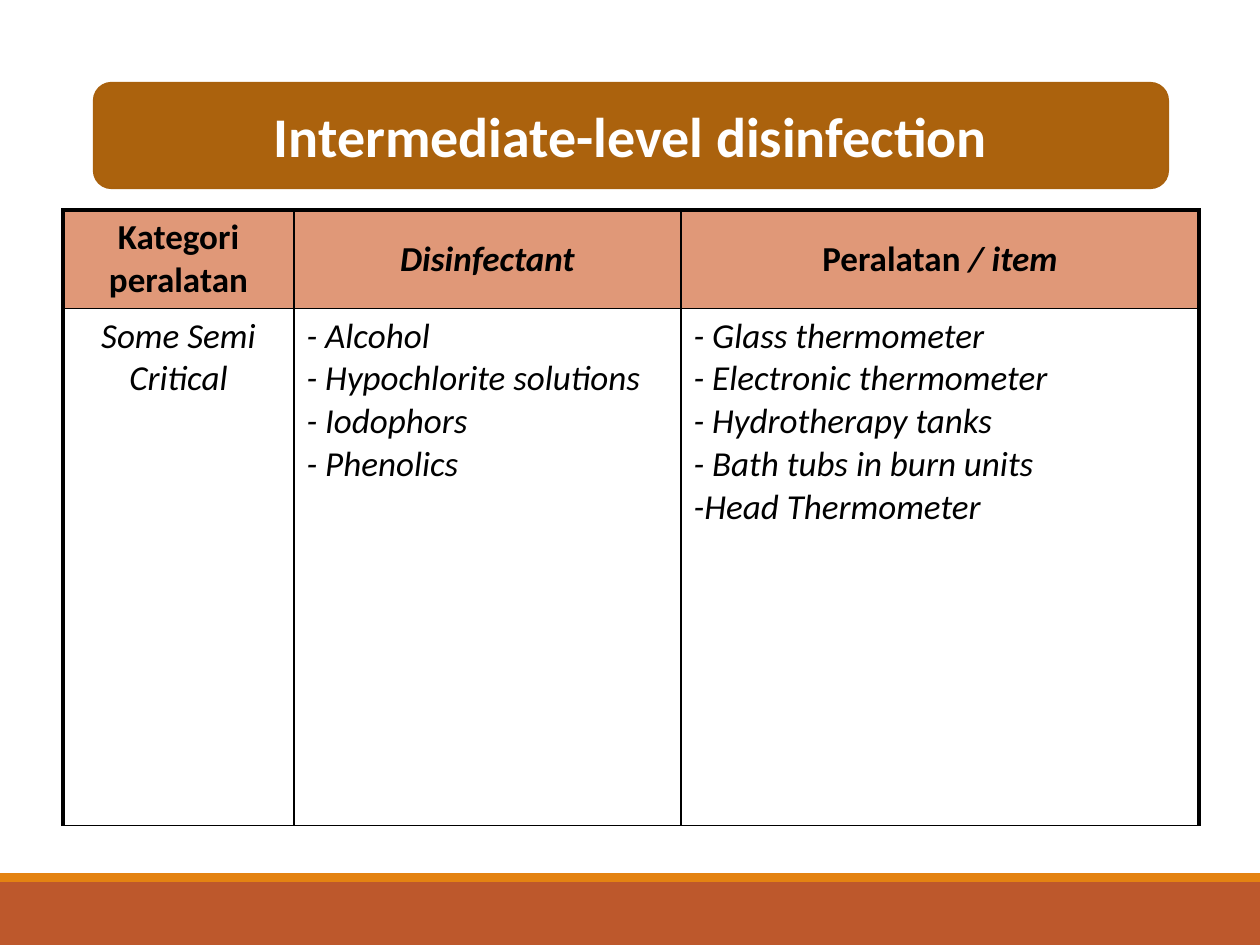
from lxml import etree
from pptx import Presentation
from pptx.dml.color import RGBColor
from pptx.enum.shapes import MSO_SHAPE
from pptx.enum.text import MSO_ANCHOR, PP_ALIGN
from pptx.oxml.ns import qn
from pptx.util import Emu, Pt

RECT = MSO_SHAPE.RECTANGLE
ROUND = MSO_SHAPE.ROUNDED_RECTANGLE
LEFT, MID = PP_ALIGN.LEFT, PP_ALIGN.CENTER
TOP, CENTER = MSO_ANCHOR.TOP, MSO_ANCHOR.MIDDLE
SCALE = 914400 / 126
THIN, THICK = 1, 2.25

HEADS = [
    [("Kategori peralatan", False)],
    [("Disinfectant", True)],
    [("Peralatan ", False), ("/ item", True)],
]
BODY = [
    "Some Semi Critical",
    "- Alcohol\n- Hypochlorite solutions\n- Iodophors\n- Phenolics",
    "- Glass thermometer\n- Electronic thermometer\n- Hydrotherapy tanks\n"
    "- Bath tubs in burn units\n-Head Thermometer",
]


def px(num):
    return Emu(round(num * SCALE))


def color(code):
    return RGBColor.from_string(code)


class Deck:
    """Holds the style and the current slide, and draws each kind of element."""

    font = "Calibri"
    ink = "000000"

    def __init__(self):
        self.prs = Presentation()
        self.prs.slide_width, self.prs.slide_height = px(1260), px(945)
        self.slide = self.prs.slides.add_slide(self.prs.slide_layouts[5])

    def style(self, run, size, code, bold=False, italic=False):
        font = run.font
        font.name, font.size = self.font, Pt(size)
        font.bold, font.italic = bold, italic
        font.color.rgb = color(code)

    def shape(self, kind, box, fill, line=None):
        shape = self.slide.shapes.add_shape(kind, *map(px, box))
        shape.shadow.inherit = False
        shape.fill.solid()
        shape.fill.fore_color.rgb = color(fill)
        if line:
            shape.line.color.rgb = color(line)
            shape.line.width = Pt(1.25)
        else:
            shape.line.fill.background()
        return shape

    def title(self, text, box):
        panel = self.shape(ROUND, box, "AB620D", "A9610D")
        title = self.slide.shapes.title
        title.left, title.top, title.width, title.height = map(px, box)
        panel.element.addnext(title.element)
        frame = title.text_frame
        frame.text = text
        frame.vertical_anchor = CENTER
        para = frame.paragraphs[0]
        para.alignment = MID
        self.style(para.runs[0], 32, "FFFFFF", bold=True)

    def border(self, cell, sides):
        props = cell._tc.get_or_add_tcPr()
        for side, width in sides.items():
            line = etree.SubElement(props, qn("a:ln" + side), w=str(Pt(width)))
            fill = etree.SubElement(line, qn("a:solidFill"))
            etree.SubElement(fill, qn("a:srgbClr"), val=self.ink)

    def head(self, cell, parts):
        para = cell.text_frame.paragraphs[0]
        para.alignment = MID
        cell.vertical_anchor = CENTER
        for text, italic in parts:
            run = para.add_run()
            run.text = text
            self.style(run, 20, self.ink, bold=True, italic=italic)
        cell.fill.solid()
        cell.fill.fore_color.rgb = color("E09878")

    def body(self, cell, text, align):
        cell.text_frame.text = text
        cell.vertical_anchor = TOP
        for para in cell.text_frame.paragraphs:
            para.alignment = align
            self.style(para.runs[0], 20, self.ink, italic=True)
        cell.fill.background()

    def table(self, left, top, cols, rows):
        box = (left, top, sum(cols), sum(rows))
        table = self.slide.shapes.add_table(
            len(rows), len(cols), *map(px, box)).table
        table.first_row = table.horz_banding = False
        for row, high in zip(table.rows, rows):
            row.height = px(high)
        last = len(cols) - 1
        for c, wide in enumerate(cols):
            table.columns[c].width = px(wide)
            for r in range(len(rows)):
                self.border(table.cell(r, c), {
                    "L": THICK if c == 0 else THIN,
                    "R": THICK if c == last else THIN,
                    "T": THICK if r == 0 else THIN,
                    "B": THIN,
                })
            self.head(table.cell(0, c), HEADS[c])
            self.body(table.cell(1, c), BODY[c], LEFT if c else MID)


def main():
    deck = Deck()
    deck.shape(RECT, (0, 882, 1260, 63), "BD582C")
    deck.shape(RECT, (0, 873, 1260, 9), "E48312")
    deck.title("Intermediate-level disinfection", (94, 83, 1074, 105))
    deck.table(63, 210, [231, 387, 518], [97, 517])
    deck.prs.save("out.pptx")


if __name__ == "__main__":
    main()
